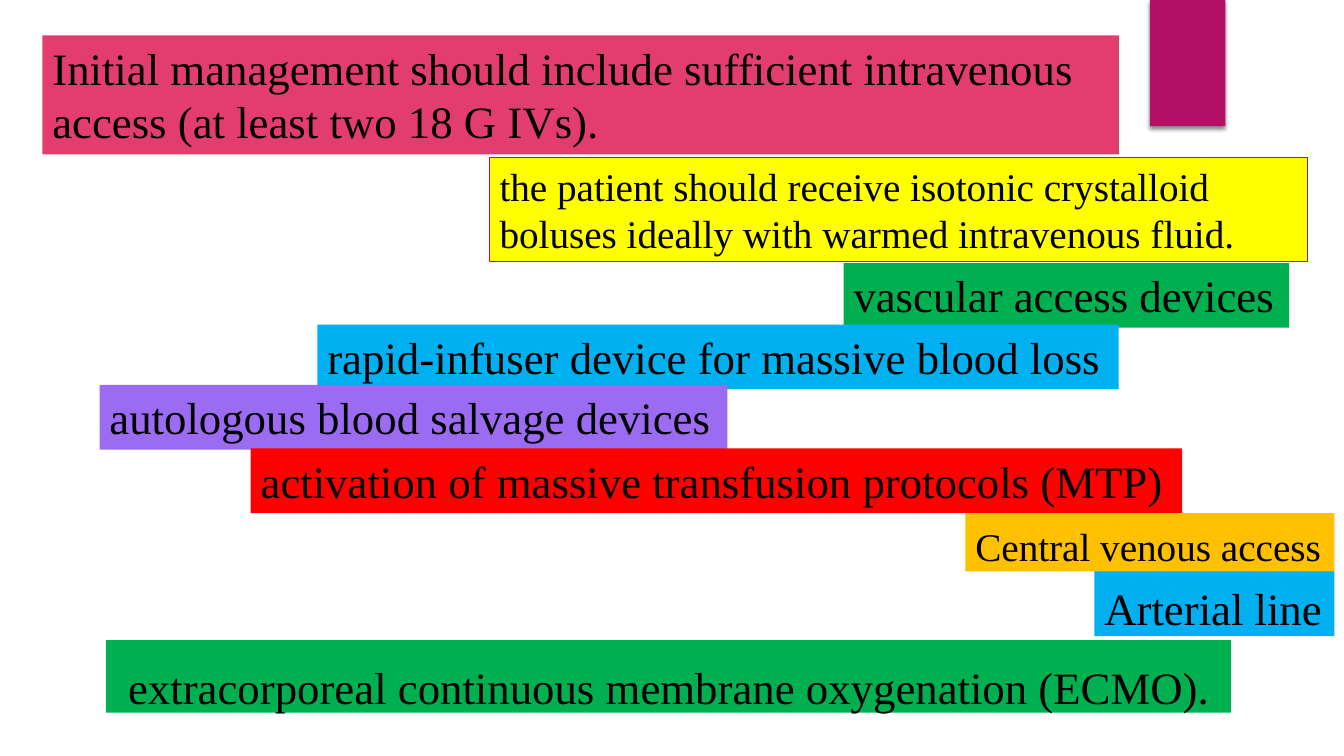
from dataclasses import dataclass
from lxml.etree import SubElement
from pptx import Presentation
from pptx.dml.color import RGBColor
from pptx.enum.shapes import MSO_SHAPE
from pptx.enum.text import MSO_ANCHOR, MSO_AUTO_SIZE, PP_ALIGN
from pptx.oxml.ns import qn
from pptx.util import Cm, Pt


@dataclass(frozen=True)
class Theme:
    font: str = "Times New Roman"
    large: int = 32
    small: int = 28
    ink: str = "000000"
    accent: str = "B31166"
    rose: str = "E33D6F"
    yellow: str = "FFFF00"
    green: str = "00B050"
    blue: str = "00B0F0"
    violet: str = "9B6BF2"
    red: str = "FF0000"
    amber: str = "FFC000"


THEME = Theme()


@dataclass(frozen=True)
class Style:
    line: float = 1.0
    after: float = 0
    margin: float = 0
    indent: float = 0
    align: PP_ALIGN = PP_ALIGN.LEFT


PLAIN = Style()
LOOSE = Style(1.1, 0.9, 0.03, -0.03)
WIDE = Style(1.28, 12.1, 0.03, 0.28, PP_ALIGN.JUSTIFY)


def paint(shape, color):
    shape.fill.solid()
    shape.fill.fore_color.rgb = RGBColor.from_string(color)


def add_tab(slide, box):
    tab = slide.shapes.add_shape(MSO_SHAPE.RECTANGLE, *map(Cm, box))
    tab.shadow.inherit = False
    paint(tab, THEME.accent)
    tab.line.fill.background()
    effects = tab.element.spPr.find(qn("a:effectLst"))
    shadow = SubElement(effects, qn("a:outerShdw"), blurRad=str(Pt(3)),
                        dist=str(Pt(2)), dir="5400000", rotWithShape="0")
    black = SubElement(shadow, qn("a:srgbClr"), val=THEME.ink)
    SubElement(black, qn("a:alpha"), val="45000")


def add_label(slide, box, text, color, size=THEME.large, wrap=False, style=PLAIN, edge=None):
    label = slide.shapes.add_textbox(*map(Cm, box))
    paint(label, color)
    if edge:
        label.line.color.rgb = RGBColor.from_string(edge)
        label.line.width = Pt(0.75)
    frame = label.text_frame
    frame.word_wrap = wrap
    frame.auto_size = MSO_AUTO_SIZE.SHAPE_TO_FIT_TEXT
    frame.vertical_anchor = MSO_ANCHOR.TOP
    para = frame.paragraphs[0]
    para.text = text
    para.alignment = style.align
    para.line_spacing = style.line
    para.space_after = Pt(style.after)
    props = para._p.get_or_add_pPr()
    props.set("marL", str(Cm(style.margin)))
    props.set("indent", str(Cm(style.indent)))
    para.font.name = THEME.font
    para.font.size = Pt(size)
    para.font.color.rgb = RGBColor.from_string(THEME.ink)


def add_steps(slide):
    add_label(slide, (1.07, 0.89, 27.13, 3),
              "Initial management should include sufficient intravenous access (at least two 18 G IVs).",
              THEME.rose, wrap=True)
    add_label(slide, (12.34, 3.96, 20.62, 2.64),
              "the patient should receive isotonic crystalloid boluses ideally with warmed intravenous fluid.",
              THEME.yellow, THEME.small, wrap=True, edge=THEME.accent)
    lines = [
        (21.26, 6.63, 11.23, "vascular access devices", THEME.green),
        (8, 8.18, 20.19, "rapid-infuser device for massive blood loss", THEME.blue),
        (2.51, 9.7, 15.82, "autologous blood salvage devices", THEME.violet),
        (6.32, 11.3, 23.47, "activation of massive transfusion protocols (MTP)", THEME.red),
    ]
    for left, top, width, text, color in lines:
        add_label(slide, (left, top, width, 1.63), text, color)
    add_label(slide, (27.58, 14.38, 6.05, 1.65), "Arterial line", THEME.blue, style=LOOSE)
    add_label(slide, (24.33, 12.93, 9.3, 1.47), "Central venous access",
              THEME.amber, THEME.small, style=LOOSE)
    add_label(slide, (2.67, 16.13, 28.35, 1.83),
              "extracorporeal continuous membrane oxygenation (ECMO).", THEME.green, style=WIDE)


def main():
    deck = Presentation()
    deck.slide_width, deck.slide_height = Cm(33.87), Cm(19.05)
    slide = deck.slides.add_slide(deck.slide_layouts[6])
    add_tab(slide, (28.98, 0, 1.9, 3.18))
    add_steps(slide)
    deck.save("out.pptx")


if __name__ == "__main__":
    main()
